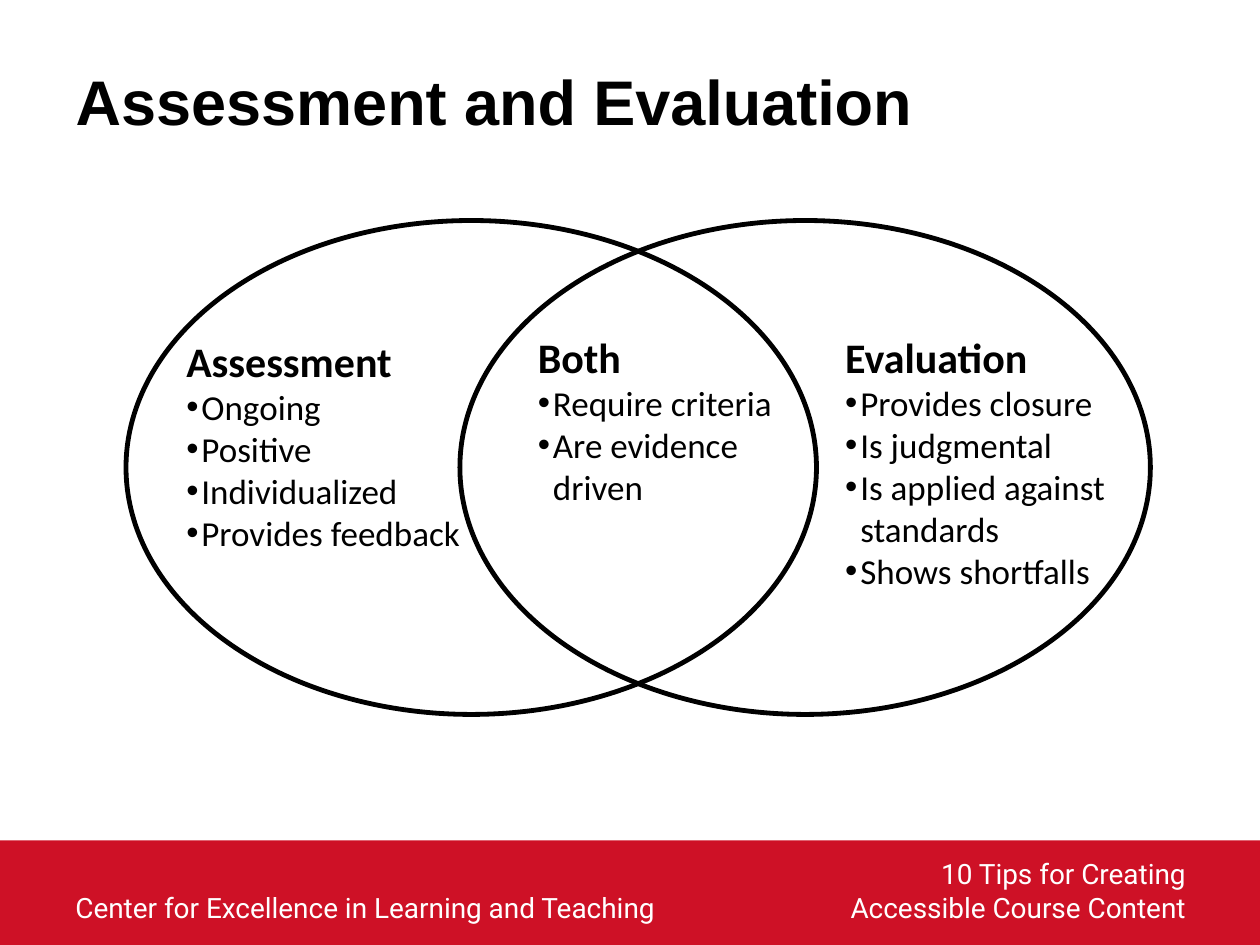
from pptx import Presentation
from pptx.dml.color import RGBColor
from pptx.enum.shapes import MSO_SHAPE
from pptx.enum.text import MSO_ANCHOR, PP_ALIGN
from pptx.oxml.ns import qn
from pptx.util import Emu, Pt
from lxml import etree

PX = 9144  # 100 px to the inch
RED = RGBColor(0xCE, 0x11, 0x26)
WHITE = RGBColor(0xFF, 0xFF, 0xFF)
BLACK = RGBColor(0, 0, 0)


def px(*lengths):
    return [Emu(length * PX) for length in lengths]


def set_font(para, name, size, color, bold=False):
    para.font.name = name
    para.font.size = Pt(size)
    para.font.bold = bold
    para.font.color.rgb = color


def add_text_box(page, left, top, width, height):
    box = page.shapes.add_textbox(*px(left, top, width, height))
    box.text_frame.word_wrap = True
    return box.text_frame


def add_bullet(para, indent):
    properties = para._p.get_or_add_pPr()
    properties.set("marL", str(indent * PX))
    properties.set("indent", str(-indent * PX))
    etree.SubElement(properties, qn("a:buFont")).set("typeface", "Arial")
    etree.SubElement(properties, qn("a:buChar")).set("char", "•")


def add_title(page, left, top, width, height, text):
    title = page.shapes.title
    title.left, title.top, title.width, title.height = px(left, top, width, height)
    frame = title.text_frame
    frame.text = text
    frame.vertical_anchor = MSO_ANCHOR.MIDDLE
    para = frame.paragraphs[0]
    para.alignment = PP_ALIGN.LEFT
    set_font(para, "Arial", 36, BLACK, bold=True)


def add_footer(page, left, top, width, height):
    band = page.shapes.add_shape(MSO_SHAPE.RECTANGLE, *px(left, top, width, height))
    band.shadow.inherit = False
    band.fill.solid()
    band.fill.fore_color.rgb = RED
    band.line.fill.background()

    # Department on the left, course on the right
    labels = [
        ((50, 35, 522, 37), PP_ALIGN.LEFT,
         "Center for Excellence in Learning and Teaching"),
        ((645, 8, 306, 64), PP_ALIGN.RIGHT,
         "10 Tips for Creating\vAccessible Course Content"),
    ]
    for (x, y, label_width, label_height), alignment, text in labels:
        frame = add_text_box(page, left + x, top + y, label_width, label_height)
        para = frame.paragraphs[0]
        para.text = text
        para.alignment = alignment
        set_font(para, "Roboto", 16, WHITE)


def add_list(page, left, top, width, height, heading, items):
    frame = add_text_box(page, left, top, width, height)
    frame.text = heading
    set_font(frame.paragraphs[0], "Calibri", 24, BLACK, bold=True)
    for item in items:
        para = frame.add_paragraph()
        para.text = item
        add_bullet(para, 12)
        set_font(para, "Calibri", 20, BLACK)


def add_venn(page, left, top, width, height):
    # Two overlapping ovals, one at each end of the region
    oval_width = 548
    for x in (0, width - oval_width):
        oval = page.shapes.add_shape(
            MSO_SHAPE.OVAL, *px(left + x, top, oval_width, height))
        oval.shadow.inherit = False
        oval.fill.background()
        oval.line.color.rgb = BLACK
        oval.line.width = Pt(2.75)

    # One list in each part
    lists = [
        ((38, 86, 241, 185), "Assessment",
         ["Ongoing", "Positive", "Individualized", "Provides feedback"]),
        ((317, 83, 241, 185), "Both",
         ["Require criteria", "Are evidence driven"]),
        ((561, 83, 230, 252), "Evaluation",
         ["Provides closure", "Is judgmental", "Is applied against standards",
          "Shows shortfalls"]),
    ]
    for (x, y, list_width, list_height), heading, items in lists:
        add_list(page, left + x, top + y, list_width, list_height, heading, items)


def main():
    deck = Presentation()
    deck.slide_width, deck.slide_height = px(1000, 750)
    page = deck.slides.add_slide(deck.slide_layouts[5])
    add_footer(page, 0, 667, 1000, 83)
    add_title(page, 50, 42, 900, 75, "Assessment and Evaluation")
    add_venn(page, 100, 175, 813, 392)
    deck.save("out.pptx")


if __name__ == "__main__":
    main()
